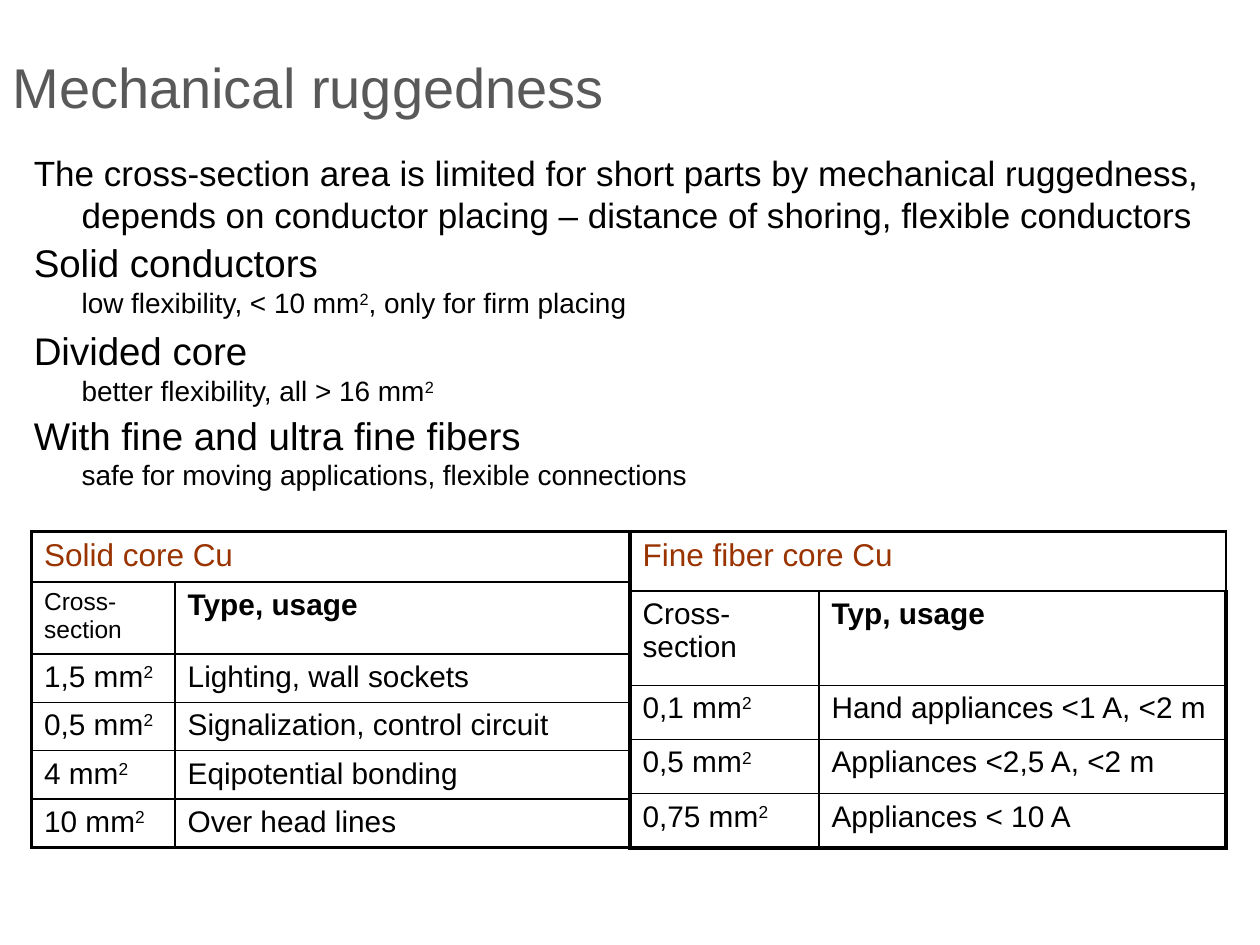
from dataclasses import dataclass

from lxml import etree
from pptx import Presentation
from pptx import util as u
from pptx.dml import color
from pptx.enum import text
from pptx.oxml import ns


@dataclass(frozen=True)
class Theme:
    """Colours, font and type sizes of the slide."""
    font: str = "Arial"
    ink: str = "000000"
    title_ink: str = "595959"
    accent: str = "993300"
    title: int = 32
    intro: int = 20
    topic: int = 22
    detail: int = 16
    caption: int = 18
    cell: int = 17
    small: int = 14
    thick: float = 2.25
    thin: float = 1


THEME = Theme()

INTRO = ("The cross-section area is limited for short parts by mechanical ruggedness, "
         "depends on conductor placing – distance of shoring, flexible conductors")
TOPICS = [
    ("Solid conductors", None, "low flexibility, < 10 mm^2^, only for firm placing"),
    ("Divided core", 24, "better flexibility, all > 16 mm^2^"),
    ("With fine and ultra fine fibers", None,
     "safe for moving applications, flexible connections"),
]
SOLID_ROWS = [
    ("Cross-section", "Type, usage"),
    ("1,5 mm^2^", "Lighting, wall sockets"),
    ("0,5 mm^2^", "Signalization, control circuit"),
    ("4 mm^2^", "Eqipotential bonding"),
    ("10 mm^2^", "Over head lines"),
]
FINE_ROWS = [
    ("Cross-section", "Typ, usage"),
    ("0,1 mm^2^", "Hand appliances <1 A, <2 m"),
    ("0,5 mm^2^", "Appliances <2,5 A, <2 m"),
    ("0,75 mm^2^", "Appliances < 10 A"),
]


def add_spans(para, words, size, ink=THEME.ink, bold=False):
    """Add words to a paragraph, raising the parts between carets."""
    for index, part in enumerate(words.split("^")):
        if not part:
            continue
        span = para.add_run()
        span.text = part
        span.font.name = THEME.font
        span.font.size = u.Pt(size)
        span.font.bold = bold
        span.font.color.rgb = color.RGBColor.from_string(ink)
        if index % 2:
            span._r.get_or_add_rPr().set("baseline", "30000")


def add_frame(page, left, top, width, height):
    """Add a wrapping text box and return its text frame."""
    box = page.shapes.add_textbox(*map(u.Inches, (left, top, width, height)))
    box.text_frame.word_wrap = True
    return box.text_frame


def add_title(page, *place):
    """Place the slide title in the given box."""
    frame = add_frame(page, *place)
    frame.vertical_anchor = text.MSO_ANCHOR.MIDDLE
    add_spans(frame.paragraphs[0], "Mechanical ruggedness", THEME.title, THEME.title_ink)


def hang(para):
    """Give a paragraph a hanging indent."""
    indent = u.Inches(0.38)
    props = para._p.get_or_add_pPr()
    props.set("marL", str(indent))
    props.set("indent", str(-indent))


def add_body(page, *place):
    """Place the introduction and the conductor topics in the given box."""
    frame = add_frame(page, *place)
    intro = frame.paragraphs[0]
    hang(intro)
    add_spans(intro, INTRO, THEME.intro)
    for topic, gap_size, detail in TOPICS:
        para = frame.add_paragraph()
        hang(para)
        para.space_before = u.Pt(2.4)
        add_spans(para, topic, THEME.topic)
        if gap_size:
            add_spans(para, " ", gap_size)
        para.add_line_break()
        add_spans(para, detail, THEME.detail)


def set_borders(cell, widths):
    """Draw the left, right, top and bottom borders of a cell."""
    props = cell._tc.get_or_add_tcPr()
    for index, (side, width) in enumerate(zip("LRTB", widths)):
        line = etree.Element(ns.qn(f"a:ln{side}"), w=str(u.Pt(width)))
        fill = etree.SubElement(line, ns.qn("a:solidFill"))
        etree.SubElement(fill, ns.qn("a:srgbClr"), val=THEME.ink)
        props.insert(index, line)


def add_core_table(page, left, top, widths, heights, caption, rows, label_size):
    """Place a captioned two-column table with a thick outline."""
    box = page.shapes.add_table(len(heights), len(widths), *map(
        u.Inches, (left, top, sum(widths), sum(heights))))
    table = box.table
    table.first_row = table.horz_banding = False
    for column, width in zip(table.columns, widths):
        column.width = u.Inches(width)
    for row, height in zip(table.rows, heights):
        row.height = u.Inches(height)
    last_row, last_column = len(heights) - 1, len(widths) - 1
    for r in range(len(heights)):
        for c in range(len(widths)):
            cell = table.cell(r, c)
            cell.fill.background()
            outer = (c == 0, c == last_column, r == 0, r == last_row)
            set_borders(cell, [THEME.thick if edge else THEME.thin for edge in outer])
    table.cell(0, 0).merge(table.cell(0, last_column))
    add_spans(table.cell(0, 0).text_frame.paragraphs[0], caption,
              THEME.caption, THEME.accent)
    for r, row in enumerate(rows, 1):
        for c, words in enumerate(row):
            is_head = r == 1
            size = label_size if is_head and c == 0 else THEME.cell
            add_spans(table.cell(r, c).text_frame.paragraphs[0], words, size,
                      bold=is_head and c == 1)


def main():
    """Build the slide and save the deck."""
    deck = Presentation()
    deck.slide_width, deck.slide_height = u.Inches(10), u.Inches(7.5)
    page = deck.slides.add_slide(deck.slide_layouts[6])
    add_title(page, 0, 0.3, 10, 0.77)
    add_body(page, 0.17, 1.15, 9.83, 2.99)
    add_core_table(page, 0.25, 4.22, (1.14, 3.61), (0.4, 0.57) + (0.38,) * 4,
                   "Solid core Cu", SOLID_ROWS, THEME.small)
    add_core_table(page, 5, 4.22, (1.5, 3.23), (0.47, 0.75) + (0.43,) * 3,
                   "Fine fiber core Cu", FINE_ROWS, THEME.cell)
    deck.save("out.pptx")


if __name__ == "__main__":
    main()
